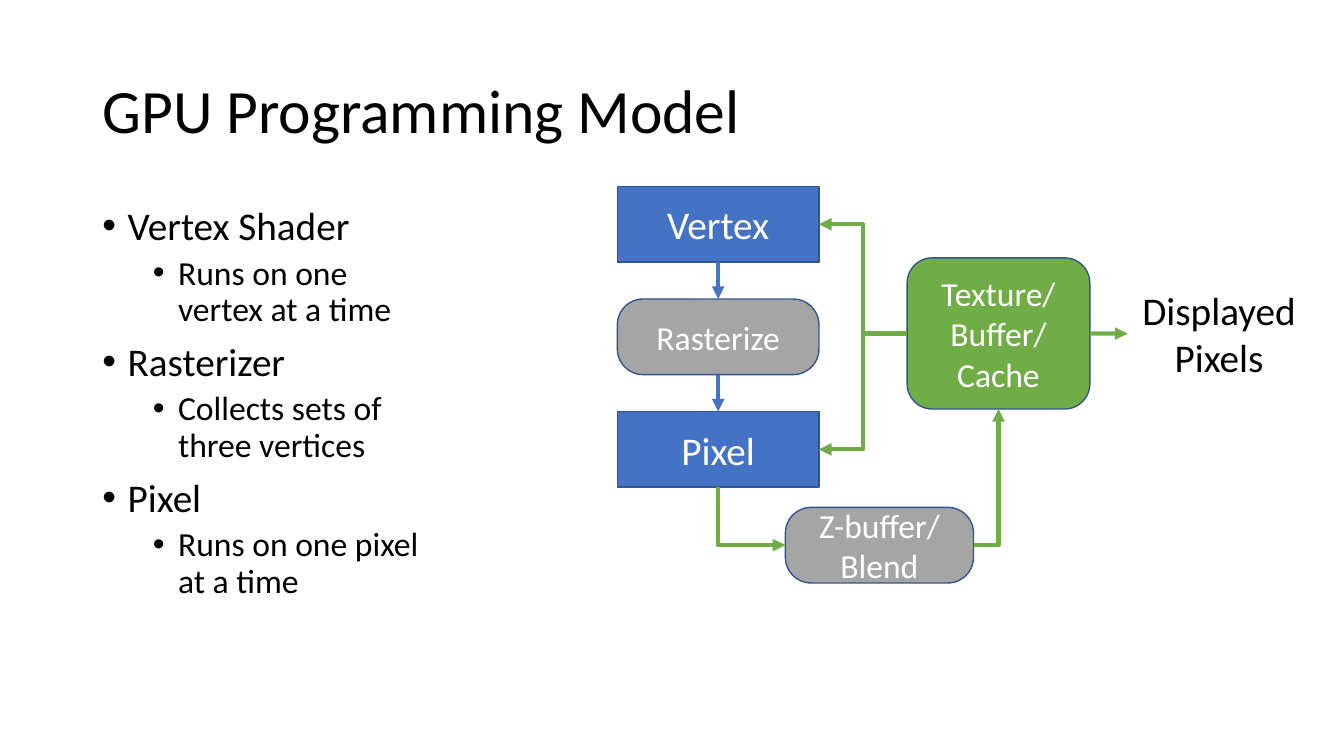
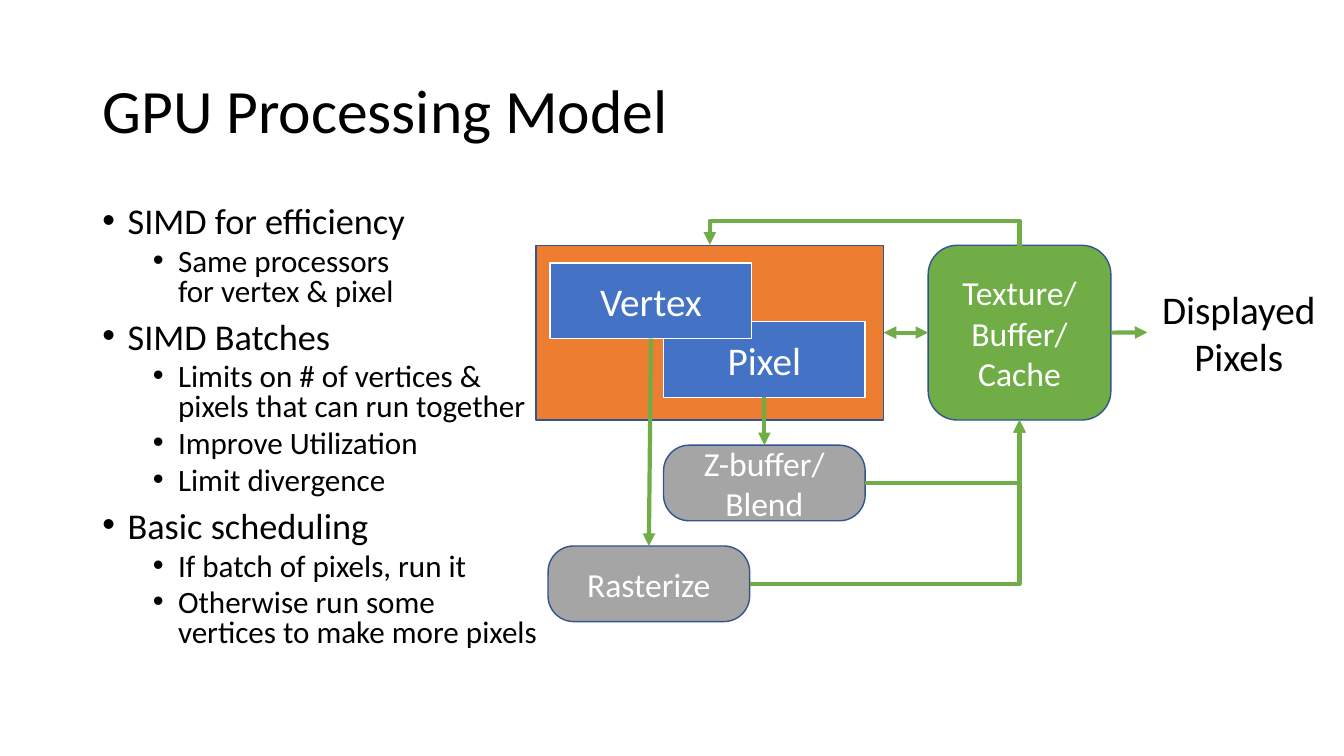
from dataclasses import dataclass

from pptx import Presentation
from pptx.dml.color import RGBColor
from pptx.enum.shapes import MSO_CONNECTOR, MSO_SHAPE
from pptx.enum.text import MSO_ANCHOR, MSO_AUTO_SIZE, PP_ALIGN
from pptx.oxml.ns import qn
from pptx.oxml.xmlchemy import OxmlElement
from pptx.util import Inches, Pt

COLUMNS, ROWS = 160, 90
SLIDE_WIDTH, SLIDE_HEIGHT = Inches(13.333), Inches(7.5)
TITLE_AREA = (11, 4.8, 138, 17.4)
BODY_AREA = (11, 24, 138, 57.1)
BOX_WIDTH, BOX_HEIGHT = 24, 9
CACHE_WIDTH = 21.75
DISPLAY_WIDTH, DISPLAY_HEIGHT = 21.75, 10.95
TOP, LEFT, BOTTOM, RIGHT = range(4)


@dataclass(frozen=True)
class Theme:
    font: str = "Calibri"
    black: RGBColor = RGBColor(0, 0, 0)
    white: RGBColor = RGBColor(255, 255, 255)
    blue: RGBColor = RGBColor(0x44, 0x72, 0xC4)
    green: RGBColor = RGBColor(0x70, 0xAD, 0x47)
    gray: RGBColor = RGBColor(0xA5, 0xA5, 0xA5)
    orange: RGBColor = RGBColor(0xED, 0x7D, 0x31)
    outline: RGBColor = RGBColor(0x32, 0x54, 0x91)
    title_size: float = 44
    large_size: float = 28
    small_size: float = 24
    outline_width: float = 1
    arrow_width: float = 3
    pill_rounding: float = 0.34


@dataclass(frozen=True)
class ListStyle:
    sizes: tuple
    line_spacing: float


THEME = Theme()
ROOMY_LIST = ListStyle((28, 24), 0.9)
DENSE_LIST = ListStyle((25.9, 22.2), 0.8)


def column(count):
    return round(SLIDE_WIDTH * count / COLUMNS)


def row(count):
    return round(SLIDE_HEIGHT * count / ROWS)


def grid(area):
    left, top, width, height = area
    return column(left), row(top), column(width), row(height)


def place(shape, area):
    shape.left, shape.top, shape.width, shape.height = grid(area)


def add_lines(paragraph, text, size, color):
    """Write each line of the text as its own run, with breaks between."""
    for index, line in enumerate(text.split("\n")):
        if index:
            paragraph.add_line_break()
        run = paragraph.add_run()
        run.text = line
        run.font.name = THEME.font
        run.font.size = Pt(size)
        run.font.color.rgb = color


def add_centered_text(shape, text, size, color):
    frame = shape.text_frame
    frame.word_wrap = True
    frame.vertical_anchor = MSO_ANCHOR.MIDDLE
    paragraph = frame.paragraphs[0]
    paragraph.alignment = PP_ALIGN.CENTER
    add_lines(paragraph, text, size, color)


def set_bullet(paragraph, level):
    properties = paragraph._p.get_or_add_pPr()
    properties.set("marL", str(Inches(0.25 + 0.5 * level)))
    properties.set("indent", str(-Inches(0.25)))
    bullet_font = OxmlElement("a:buFont")
    bullet_font.set("typeface", "Arial")
    bullet = OxmlElement("a:buChar")
    bullet.set("char", "•")
    properties.extend([bullet_font, bullet])


def add_content_slide(presentation, title, items, style):
    """Fill the title and the two-level list of a new slide."""
    slide = presentation.slides.add_slide(presentation.slide_layouts[1])
    heading, body = slide.shapes.title, slide.placeholders[1]
    place(heading, TITLE_AREA)
    place(body, BODY_AREA)
    for placeholder in (heading, body):
        placeholder.text_frame.auto_size = MSO_AUTO_SIZE.NONE
        placeholder.text_frame.word_wrap = True
    heading.text_frame.vertical_anchor = MSO_ANCHOR.MIDDLE
    paragraph = heading.text_frame.paragraphs[0]
    paragraph.alignment = PP_ALIGN.LEFT
    paragraph.line_spacing = 0.9
    add_lines(paragraph, title, THEME.title_size, THEME.black)

    frame = body.text_frame
    for index, (level, text) in enumerate(items):
        paragraph = frame.add_paragraph() if index else frame.paragraphs[0]
        paragraph.level = level
        paragraph.line_spacing = style.line_spacing
        paragraph.space_before = Pt((10, 5)[level])
        set_bullet(paragraph, level)
        add_lines(paragraph, text, style.sizes[level], THEME.black)
    return slide


def add_box(slide, area, fill, text="", size=THEME.small_size,
            kind=MSO_SHAPE.RECTANGLE, outline=THEME.outline):
    shape = slide.shapes.add_shape(kind, *grid(area))
    shape.shadow.inherit = False
    shape.fill.solid()
    shape.fill.fore_color.rgb = fill
    shape.line.color.rgb = outline
    shape.line.width = Pt(THEME.outline_width)
    if text:
        add_centered_text(shape, text, size, THEME.white)
    return shape


def add_shader(slide, left, top, text, outline=THEME.outline):
    return add_box(slide, (left, top, BOX_WIDTH, BOX_HEIGHT), THEME.blue, text,
                   THEME.large_size, outline=outline)


def add_fixed_stage(slide, left, top, text, width=BOX_WIDTH):
    stage = add_box(slide, (left, top, width, BOX_HEIGHT), THEME.gray, text,
                    kind=MSO_SHAPE.ROUNDED_RECTANGLE)
    stage.adjustments[0] = THEME.pill_rounding
    return stage


def add_cache(slide, left, top, height):
    return add_box(slide, (left, top, CACHE_WIDTH, height), THEME.green,
                   "Texture/\nBuffer/\nCache", kind=MSO_SHAPE.ROUNDED_RECTANGLE)


def add_display_label(slide, left, top):
    label = slide.shapes.add_textbox(*grid((left, top, DISPLAY_WIDTH, DISPLAY_HEIGHT)))
    add_centered_text(label, "Displayed\nPixels", THEME.large_size, THEME.black)
    return label


def add_arrow(slide, start, start_side, end, end_side, kind=MSO_CONNECTOR.STRAIGHT,
              color=THEME.green, heads=("tailEnd",)):
    """Join two shapes at the given sides."""
    connector = slide.shapes.add_connector(kind, 0, 0, 0, 0)
    connector.begin_connect(start, start_side)
    connector.end_connect(end, end_side)
    connector.line.color.rgb = color
    connector.line.width = Pt(THEME.arrow_width)
    for name in heads:
        head = OxmlElement(f"a:{name}")
        head.set("type", "triangle")
        connector.line._get_or_add_ln().append(head)
    connector.element.spPr.append(OxmlElement("a:effectLst"))
    return connector


def add_corner_arrow(slide, start, start_side, end, end_side, heads=("tailEnd",)):
    """Run sideways from start, then turn once towards end."""
    connector = add_arrow(slide, start, start_side, end, end_side,
                          MSO_CONNECTOR.ELBOW, heads=heads)
    connector.element.spPr.find(qn("a:prstGeom")).set("prst", "bentConnector2")


def add_loop_arrow(slide, start, end, rise):
    """Leave the top of start, run left above both shapes, enter the top of end."""
    connector = add_arrow(slide, start, TOP, end, TOP, MSO_CONNECTOR.ELBOW)
    span = connector.begin_x - connector.end_x
    thickness = Inches(0.01)
    center = (connector.begin_x + connector.end_x) // 2
    connector.left, connector.top = center - thickness // 2, start.top - span // 2
    connector.width, connector.height = thickness, span
    properties = connector.element.spPr
    transform = properties.find(qn("a:xfrm"))
    transform.attrib.pop("flipH", None)
    transform.set("flipV", "1")
    transform.set("rot", str(270 * 60000))
    guides = properties.find(qn("a:prstGeom")).find(qn("a:avLst"))
    guide = OxmlElement("a:gd")
    guide.set("name", "adj1")
    guide.set("fmla", f"val {round(100000 * row(rise) / thickness)}")
    guides.append(guide)


def build_programming_slide(presentation):
    slide = add_content_slide(presentation, "GPU Programming Model", [
        (0, "Vertex Shader"),
        (1, "Runs on one\nvertex at a time"),
        (0, "Rasterizer"),
        (1, "Collects sets of\nthree vertices"),
        (0, "Pixel"),
        (1, "Runs on one pixel\nat a time"),
    ], ROOMY_LIST)
    left, top, pitch = 73.5, 22.2, 13.4
    vertex = add_shader(slide, left, top, "Vertex")
    rasterize = add_fixed_stage(slide, left, top + pitch, "Rasterize")
    pixel = add_shader(slide, left, top + 2 * pitch, "Pixel")
    blend = add_fixed_stage(slide, 93.5, 60.4, "Z-buffer/\nBlend", 22.4)
    cache = add_cache(slide, 108, 30.7, 18)
    display = add_display_label(slide, 134.25, 34.25)

    for shader in (vertex, pixel):
        add_arrow(slide, cache, LEFT, shader, RIGHT, MSO_CONNECTOR.ELBOW)
    add_corner_arrow(slide, blend, LEFT, pixel, BOTTOM, heads=("headEnd",))
    add_corner_arrow(slide, blend, RIGHT, cache, BOTTOM)
    add_arrow(slide, cache, RIGHT, display, LEFT)
    for upper, lower in ((vertex, rasterize), (rasterize, pixel)):
        add_arrow(slide, upper, BOTTOM, lower, TOP, color=THEME.blue)


def build_processing_slide(presentation):
    slide = add_content_slide(presentation, "GPU Processing Model", [
        (0, "SIMD for efficiency"),
        (1, "Same processors\nfor vertex & pixel"),
        (0, "SIMD Batches"),
        (1, "Limits on # of vertices &\npixels that can run together"),
        (1, "Improve Utilization"),
        (1, "Limit divergence"),
        (0, "Basic scheduling"),
        (1, "If batch of pixels, run it"),
        (1, "Otherwise run some\nvertices to make more pixels"),
    ], DENSE_LIST)
    top, height, pixel_left = 29.2, 20.8, 79
    processors = add_box(slide, (63.8, top, 41.4, height), THEME.orange)
    pixel = add_shader(slide, pixel_left, 38.3, "Pixel", THEME.white)
    vertex = add_shader(slide, 65.5, 31.3, "Vertex", THEME.white)
    blend = add_fixed_stage(slide, pixel_left, 53, "Z-buffer/\nBlend")
    rasterize = add_fixed_stage(slide, 65.25, 65, "Rasterize")
    cache = add_cache(slide, 110.5, top, height)
    display = add_display_label(slide, 136.6, 34.1)

    add_arrow(slide, processors, RIGHT, cache, LEFT, heads=("headEnd", "tailEnd"))
    for stage in (blend, rasterize):
        add_corner_arrow(slide, stage, RIGHT, cache, BOTTOM)
    for shader, stage in ((pixel, blend), (vertex, rasterize)):
        add_arrow(slide, shader, BOTTOM, stage, TOP)
    add_arrow(slide, cache, RIGHT, display, LEFT)
    add_loop_arrow(slide, cache, processors, 3)


def main():
    presentation = Presentation()
    presentation.slide_width, presentation.slide_height = SLIDE_WIDTH, SLIDE_HEIGHT
    build_programming_slide(presentation)
    build_processing_slide(presentation)
    presentation.save("out.pptx")


if __name__ == "__main__":
    main()
